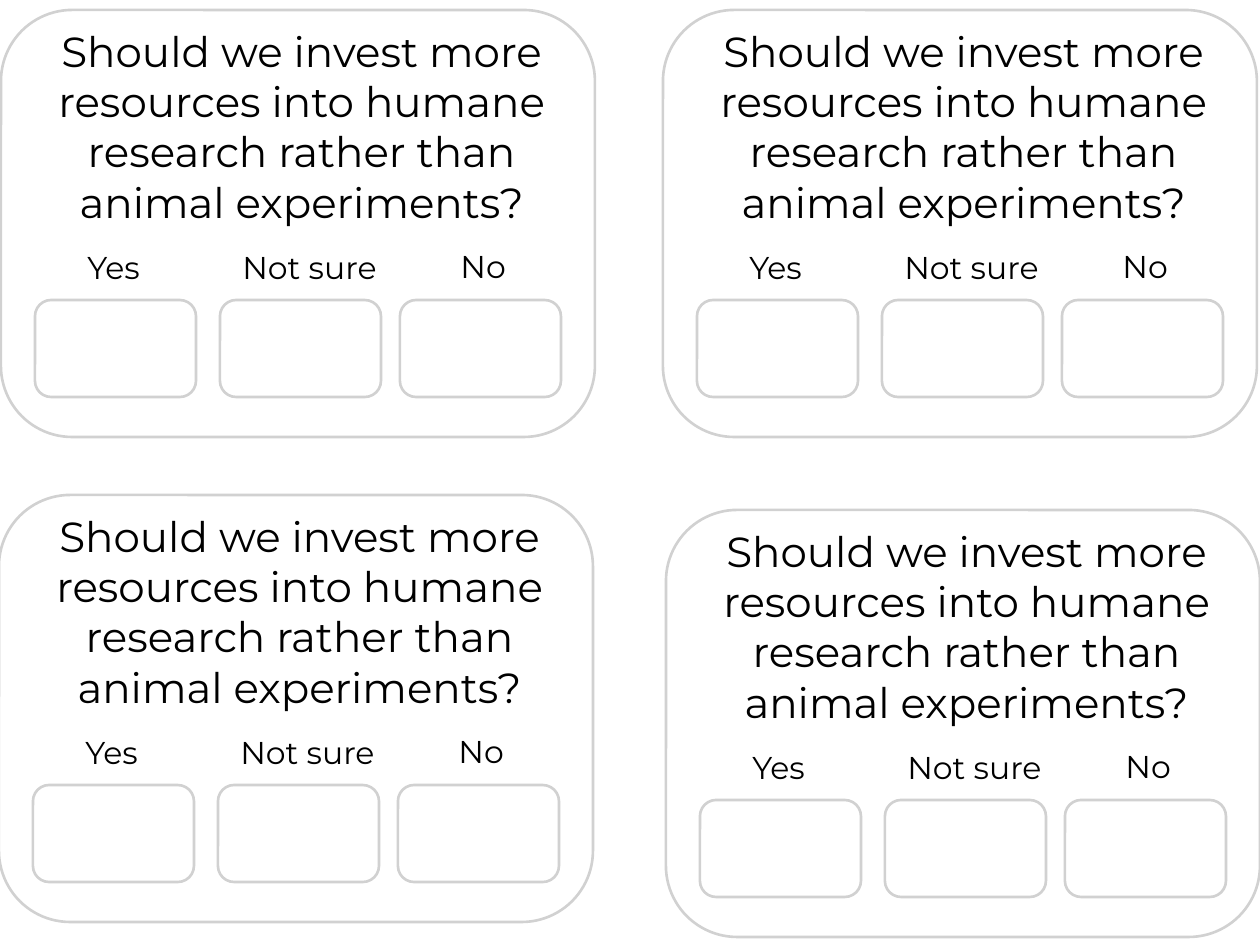
import pptx
import pptx.dml.color
import pptx.enum.shapes
import pptx.enum.text
import pptx.util

PX = 914400 / 126
FONT = "Montserrat"
QUESTION = "Should we invest more resources into humane research rather than animal experiments?"
CARD_SIZE = (594, 427)
CARD_CORNERS = [(-1, 495), (1, 10), (663, 10), (666, 510)]
ANSWERS = [
    ("Yes", 34, (74, 232, 89, 50)),
    ("Not sure", 219, (229, 232, 161, 50)),
    ("No", 399, (447, 231, 72, 50)),
]


def px(length):
    return pptx.util.Emu(round(length * PX))


def color(value):
    return pptx.dml.color.RGBColor.from_string(value)


def add_panel(shapes, left, top, width, height):
    panel = shapes.add_shape(
        pptx.enum.shapes.MSO_SHAPE.ROUNDED_RECTANGLE,
        px(left), px(top), px(width), px(height),
    )
    panel.shadow.inherit = False
    panel.fill.solid()
    panel.fill.fore_color.rgb = color("FFFFFF")
    panel.line.color.rgb = color("D1D1D1")
    panel.line.width = pptx.util.Pt(1.5)


def add_label(shapes, text, left, top, width, height, size, align, wrap):
    label = shapes.add_textbox(px(left), px(top), px(width), px(height))
    frame = label.text_frame
    frame.text = text
    frame.word_wrap = wrap
    frame.auto_size = pptx.enum.text.MSO_AUTO_SIZE.SHAPE_TO_FIT_TEXT
    paragraph = frame.paragraphs[0]
    paragraph.alignment = align
    font = paragraph.runs[0].font
    font.name = FONT
    font.size = pptx.util.Pt(size)
    font.color.rgb = color("000000")


def add_poll_card(slide, left, top, width, height):
    shapes = slide.shapes.add_group_shape().shapes
    align = pptx.enum.text.PP_ALIGN
    add_panel(shapes, left, top, width, height)
    add_label(shapes, QUESTION, left + 15, top + 9, 571, 217, 24, align.CENTER, True)
    for answer, box_left, (x, y, w, h) in ANSWERS:
        add_panel(shapes, left + box_left, top + 290, 161, 97)
        add_label(shapes, answer, left + x, top + y, w, h, 18, align.LEFT, False)


def main():
    deck = pptx.Presentation()
    deck.slide_width = px(1260)
    deck.slide_height = px(945)
    slide = deck.slides.add_slide(deck.slide_layouts[6])
    for left, top in CARD_CORNERS:
        add_poll_card(slide, left, top, *CARD_SIZE)
    deck.save("out.pptx")


if __name__ == "__main__":
    main()
